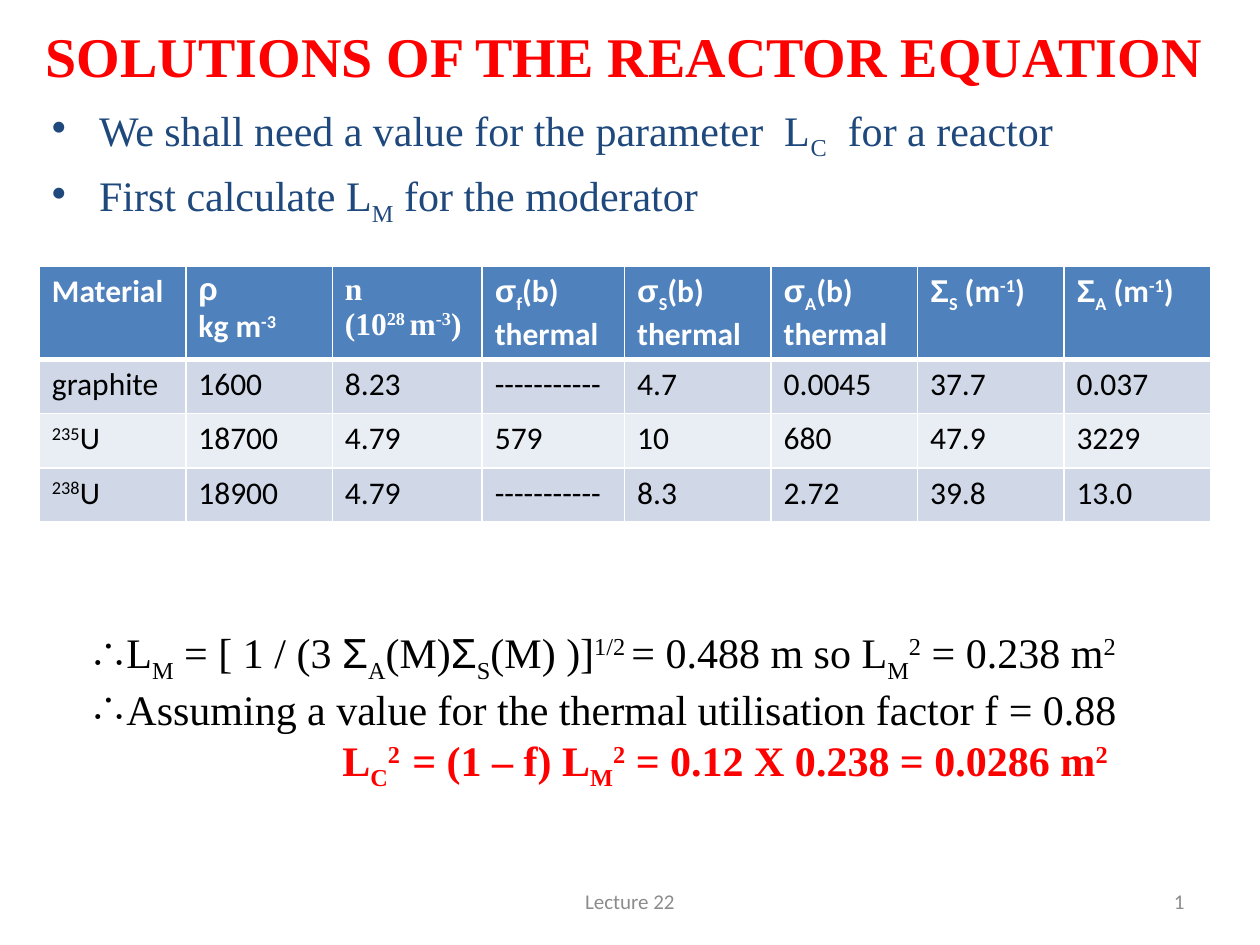
"""Build the lecture slide on solutions of the reactor equation."""
from dataclasses import dataclass

from lxml import etree
from pptx import Presentation
from pptx.dml.color import RGBColor
from pptx.enum.text import MSO_ANCHOR, PP_ALIGN
from pptx.oxml.ns import qn
from pptx.util import Pt

LEFT, CENTER, RIGHT = PP_ALIGN.LEFT, PP_ALIGN.CENTER, PP_ALIGN.RIGHT
TOP, MIDDLE = MSO_ANCHOR.TOP, MSO_ANCHOR.MIDDLE
SHIFTS = {"_": "-25000", "^": "30000"}
SYMBOLS = {"Σ", "σ", "ρ"}

TITLE = "SOLUTIONS OF THE REACTOR EQUATION"
POINTS = ["We shall need a value for the parameter  L|_C|  for a reactor",
          "First calculate L|_M| for the moderator"]
STEPS = ["L|_M| = [ 1 / (3 |Σ|_A|(M)|Σ|_S|(M) )]|^1/2 |= 0.488 m so L|_M|^2| = 0.238 m|^2",
         "Assuming a value for the thermal utilisation factor f = 0.88"]
RESULT = "L|_C|^2  |= (1 – f) L|_M|^2| = 0.12 X 0.238 = 0.0286 m|^2"
DENSITY_COL = 2
HEADER = [["Material"], ["ρ", "kg m|^-3"], ["n", "(10|^28 |m|^-3|)"],
          *[[f"σ|_{kind}|(b)", "thermal"] for kind in "fSA"],
          *[[f"Σ|_{kind}| (m|^-1|)"] for kind in "SA"]]
NONE = "-----------"
MATERIALS = [
    ["graphite", "1600", "8.23", NONE, "4.7", "0.0045", "37.7", "0.037"],
    ["^235|U", "18700", "4.79", "579", "10", "680", "47.9", "3229"],
    ["^238|U", "18900", "4.79", NONE, "8.3", "2.72", "39.8", "13.0"],
]
COL_WIDTHS = [83.7, 83.7, 85.7, 81.4, 83.7, 83.7, 83.7, 83.7]
ROW_HEIGHTS = [53.3, 31, 31, 31]


@dataclass(frozen=True)
class Theme:
    """Colours, fonts and type sizes."""
    serif: str = "Times New Roman"
    sans: str = "Calibri"
    symbol: str = "Arial"
    red: str = "FF0000"
    navy: str = "1F497D"
    black: str = "000000"
    white: str = "FFFFFF"
    grey: str = "8C8C8C"
    header: str = "4F81BD"
    bands: tuple = ("D0D8E8", "E9EDF4")
    title_size: int = 32
    body_size: int = 24
    table_size: int = 18
    footer_size: int = 12


class SlideBuilder:
    """Hold the theme and the current slide, and add elements to it."""

    def __init__(self, slide, theme):
        self.slide, self.theme = slide, theme

    def add_runs(self, p, markup, size, color, font, bold=False, align=LEFT):
        """Fill a paragraph from parts split by bars, _ lowering and ^ raising."""
        p.alignment = align
        for part in markup.split("|"):
            shift = SHIFTS.get(part[0])
            r = p.add_run()
            r.text = part[1:] if shift else part
            r.font.size, r.font.bold = Pt(size), bold
            r.font.name = self.theme.symbol if part in SYMBOLS else font
            r.font.color.rgb = RGBColor.from_string(color)
            if shift:
                r._r.get_or_add_rPr().set("baseline", shift)

    def indent(self, p, margin, first=0, bullet=None):
        """Set the indents of a paragraph and its bullet character."""
        pPr = p._p.get_or_add_pPr()
        pPr.set("marL", str(Pt(margin)))
        pPr.set("indent", str(Pt(first)))
        if bullet:
            etree.SubElement(pPr, qn("a:buChar")).set("char", bullet)

    def title(self, text, x, y, w, h):
        """Place and fill the title placeholder."""
        t, sp = self.theme, self.slide.shapes.title
        sp.left, sp.top, sp.width, sp.height = Pt(x), Pt(y), Pt(w), Pt(h)
        tf = sp.text_frame
        tf.vertical_anchor = MIDDLE
        self.add_runs(tf.paragraphs[0], text, t.title_size, t.red, t.serif, True, CENTER)

    def box(self, x, y, w, h, anchor=TOP):
        """Add a wrapping text box and return it."""
        sp = self.slide.shapes.add_textbox(Pt(x), Pt(y), Pt(w), Pt(h))
        sp.text_frame.word_wrap = True
        sp.text_frame.vertical_anchor = anchor
        return sp

    def bullets(self, lines, x, y, w, h):
        """Add the bulleted introduction."""
        t, sp = self.theme, self.box(x, y, w, h)
        sp.fill.solid()
        sp.fill.fore_color.rgb = RGBColor.from_string(t.white)
        tf = sp.text_frame
        for i, line in enumerate(lines):
            p = tf.add_paragraph() if i else tf.paragraphs[0]
            self.indent(p, 27, -27, "•")
            if i:
                p.space_before = Pt(4.8)
            self.add_runs(p, line, t.body_size, t.navy, t.serif)

    def derivation(self, steps, result, x, y, w, h):
        """Add the reasoning steps and the highlighted result."""
        t, tf = self.theme, self.box(x, y, w, h).text_frame
        for i, step in enumerate(steps):
            p = tf.add_paragraph() if i else tf.paragraphs[0]
            self.indent(p, 0, bullet="∴")
            self.add_runs(p, step, t.body_size, t.black, t.serif)
        p = tf.add_paragraph()
        self.indent(p, 144)
        self.add_runs(p, result, t.body_size, t.red, t.serif, True)

    def footer(self, text, x, w, align):
        """Add one footer text."""
        t, tf = self.theme, self.box(x, 500.5, w, 28.75, MIDDLE).text_frame
        self.add_runs(tf.paragraphs[0], text, t.footer_size, t.grey, t.sans, align=align)

    def borders(self, cell, top, bottom):
        """Draw the white borders of a cell."""
        tcPr = cell._tc.get_or_add_tcPr()
        widths = {"a:lnL": 1, "a:lnR": 1, "a:lnT": top, "a:lnB": bottom}
        for i, (tag, width) in enumerate(widths.items()):
            ln = etree.Element(qn(tag), w=str(Pt(width)))
            fill = etree.SubElement(ln, qn("a:solidFill"))
            etree.SubElement(fill, qn("a:srgbClr")).set("val", self.theme.white)
            tcPr.insert(i, ln)

    def cell(self, cell, lines, row, font):
        """Fill and style one table cell."""
        t, head = self.theme, row == 0
        cell.fill.solid()
        fill = t.header if head else t.bands[(row - 1) % 2]
        cell.fill.fore_color.rgb = RGBColor.from_string(fill)
        self.borders(cell, 3 if row == 1 else 1, 3 if head else 1)
        tf = cell.text_frame
        for i, line in enumerate(lines):
            p = tf.add_paragraph() if i else tf.paragraphs[0]
            self.add_runs(p, line, t.table_size, t.white if head else t.black, font, head)

    def table(self, header, rows, x, y):
        """Add the table of material properties."""
        t = self.theme
        grid = [header] + [[[value] for value in row] for row in rows]
        tbl = self.slide.shapes.add_table(
            len(grid), len(header), Pt(x), Pt(y),
            Pt(sum(COL_WIDTHS)), Pt(sum(ROW_HEIGHTS))).table
        for col, width in zip(tbl.columns, COL_WIDTHS):
            col.width = Pt(width)
        for i, (height, row) in enumerate(zip(ROW_HEIGHTS, grid)):
            tbl.rows[i].height = Pt(height)
            for j, lines in enumerate(row):
                font = t.serif if i == 0 and j == DENSITY_COL else t.sans
                self.cell(tbl.cell(i, j), lines, i, font)


def main():
    """Build and save the slide."""
    prs = Presentation()
    prs.slide_width, prs.slide_height = Pt(720), Pt(540)
    s = SlideBuilder(prs.slides.add_slide(prs.slide_layouts[5]), Theme())
    s.title(TITLE, 16.5, 0, 680.5, 62.5)
    s.bullets(POINTS, 22.5, 56, 675, 67.5)
    s.table(HEADER, MATERIALS, 22.5, 152)
    s.footer("1", 516, 168, RIGHT)
    s.footer("Lecture 22", 246, 228, CENTER)
    s.derivation(STEPS, RESULT, 44.5, 354.5, 641.5, 116.5)
    prs.save("out.pptx")


if __name__ == "__main__":
    main()
